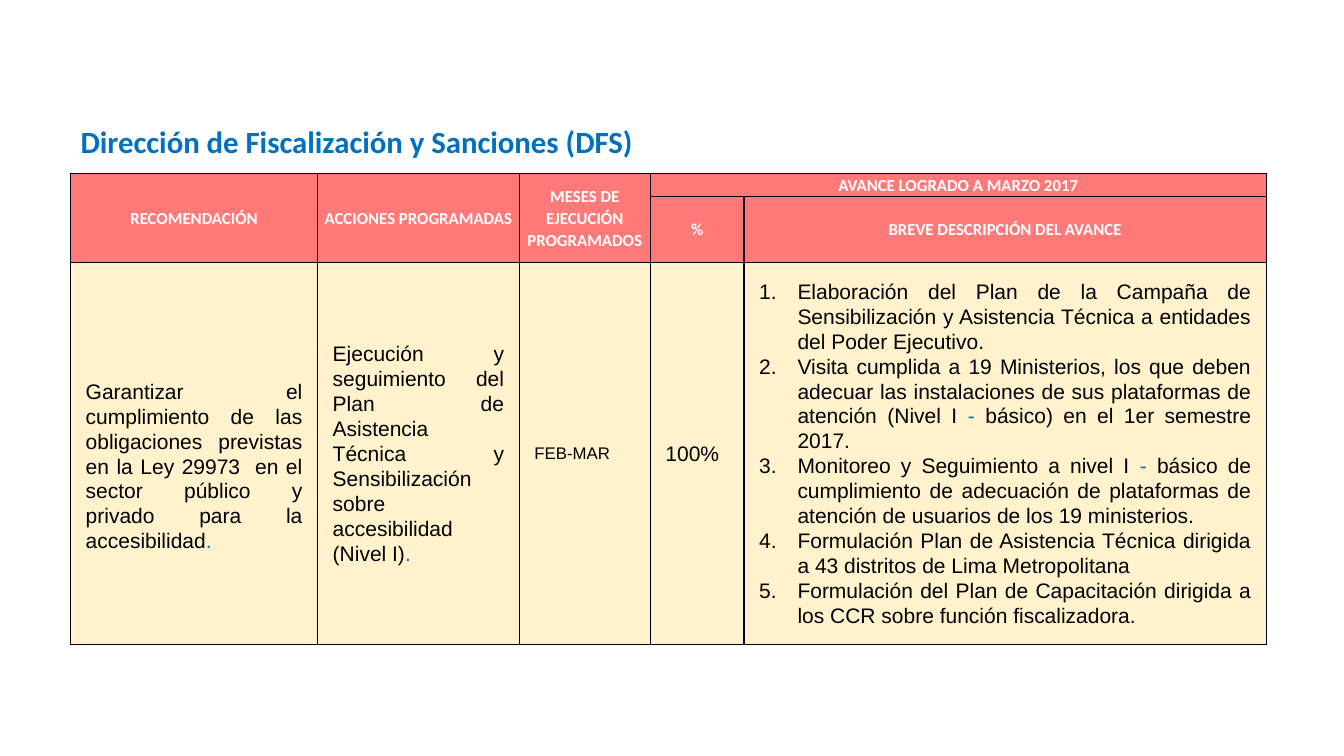
from dataclasses import dataclass

from lxml import etree
from pptx import Presentation
from pptx import util as u
from pptx.dml.color import RGBColor
from pptx.enum import text
from pptx.oxml import ns

WHITE = RGBColor(0xFF, 0xFF, 0xFF)
BLACK = RGBColor(0x00, 0x00, 0x00)
BLUE = RGBColor(0x00, 0x70, 0xC0)
CORAL = RGBColor(0xFF, 0x79, 0x79)
CREAM = RGBColor(0xFF, 0xF2, 0xCC)

COLUMN_WIDTHS = [2.45, 2, 1.3, 0.93, 5.18]
ROW_HEIGHTS = [0.23, 0.51, 3.79]


@dataclass
class Heading:
    label: str
    row: int
    column: int
    last_row: int
    last_column: int


@dataclass
class Entry:
    paragraphs: list[list[str]]
    size: float = 15
    numbered: bool = False
    top_margin: float = 0.15
    space_after: float = 0


HEADINGS = [
    Heading("RECOMENDACIÓN", 0, 0, 1, 0),
    Heading("ACCIONES PROGRAMADAS", 0, 1, 1, 1),
    Heading("MESES DE EJECUCIÓN PROGRAMADOS", 0, 2, 1, 2),
    Heading("AVANCE LOGRADO A MARZO 2017", 0, 3, 0, 4),
    Heading("%", 1, 3, 1, 3),
    Heading("BREVE DESCRIPCIÓN DEL AVANCE", 1, 4, 1, 4),
]

ENTRIES = [
    Entry([["Garantizar el cumplimiento de las obligaciones previstas en la "
            "Ley 29973  en el sector público y privado para la accesibilidad", "."]],
          top_margin=0.4),
    Entry([["Ejecución y seguimiento del Plan de Asistencia Técnica y "
            "Sensibilización sobre accesibilidad (Nivel I)", "."]],
          space_after=6),
    Entry([["FEB-MAR"]], size=12),
    Entry([["100%"]]),
    Entry([
        ["Elaboración del Plan de la Campaña de Sensibilización y Asistencia "
         "Técnica a entidades del Poder Ejecutivo."],
        ["Visita cumplida a 19 Ministerios, los que deben adecuar las instalaciones "
         "de sus plataformas de atención (Nivel I ", "- ",
         "básico) en el 1er semestre 2017."],
        ["Monitoreo y Seguimiento a nivel I ", "-",
         " básico de cumplimiento de adecuación de plataformas de atención de "
         "usuarios de los 19 ministerios."],
        ["Formulación Plan de Asistencia Técnica dirigida a 43 distritos de Lima "
         "Metropolitana"],
        ["Formulación del Plan de Capacitación dirigida a los CCR sobre función "
         "fiscalizadora."],
    ], numbered=True),
]


def write(frame, paragraphs: list[list[str]], *, size: float, font: str,
          colors: tuple[RGBColor, ...], bold: bool = False, align=None,
          line_spacing: float | None = None, space_after: float = 0,
          numbered: bool = False) -> None:
    for index, pieces in enumerate(paragraphs):
        paragraph = frame.paragraphs[0] if index == 0 else frame.add_paragraph()
        paragraph.alignment = align
        paragraph.line_spacing = line_spacing
        paragraph.space_after = u.Pt(space_after)
        if numbered:
            properties = paragraph._p.get_or_add_pPr()
            properties.set("marL", str(u.Inches(0.38)))
            properties.set("indent", str(-u.Inches(0.38)))
            number = etree.SubElement(properties, ns.qn("a:buAutoNum"))
            number.set("type", "arabicPeriod")
        for position, piece in enumerate(pieces):
            run = paragraph.add_run()
            run.text = piece
            run.font.size = u.Pt(size)
            run.font.name = font
            run.font.bold = bold
            run.font.color.rgb = colors[position % len(colors)]


def style_cell(cell, fill: RGBColor, side: float, top: float, bottom: float) -> None:
    cell.margin_left = cell.margin_right = u.Inches(side)
    cell.margin_top, cell.margin_bottom = u.Inches(top), u.Inches(bottom)
    cell.vertical_anchor = text.MSO_ANCHOR.MIDDLE
    properties = cell._tc.get_or_add_tcPr()
    for edge in ("a:lnL", "a:lnR", "a:lnT", "a:lnB"):
        border = etree.SubElement(properties, ns.qn(edge), w=str(u.Pt(1)))
        solid = etree.SubElement(border, ns.qn("a:solidFill"))
        etree.SubElement(solid, ns.qn("a:srgbClr"), val=str(BLACK))
    cell.fill.solid()
    cell.fill.fore_color.rgb = fill


def add_title(slide) -> None:
    title = slide.shapes.add_textbox(u.Inches(0.7), u.Inches(1.17),
                                     u.Inches(5.75), u.Inches(0.47)).text_frame
    title.word_wrap = False
    title.auto_size = text.MSO_AUTO_SIZE.SHAPE_TO_FIT_TEXT
    write(title, [["Dirección de Fiscalización y Sanciones (DFS)"]],
          size=22, font="Calibri", colors=(BLUE,), bold=True)


def add_progress_table(slide) -> None:
    progress = slide.shapes.add_table(
        len(ROW_HEIGHTS), len(COLUMN_WIDTHS), u.Inches(0.7), u.Inches(1.72),
        u.Inches(sum(COLUMN_WIDTHS)), u.Inches(sum(ROW_HEIGHTS))).table
    for column, width in zip(progress.columns, COLUMN_WIDTHS):
        column.width = u.Inches(width)
    for row, height in zip(progress.rows, ROW_HEIGHTS):
        row.height = u.Inches(height)
    for row in range(2):
        for column in range(len(COLUMN_WIDTHS)):
            style_cell(progress.cell(row, column), CORAL, 0.05, 0, 0)
    for heading in HEADINGS:
        cell = progress.cell(heading.row, heading.column)
        if (heading.row, heading.column) != (heading.last_row, heading.last_column):
            cell.merge(progress.cell(heading.last_row, heading.last_column))
        write(cell.text_frame, [[heading.label]], size=12, font="Calibri",
              colors=(WHITE,), bold=True, align=text.PP_ALIGN.CENTER,
              line_spacing=1.07)
    for column, entry in enumerate(ENTRIES):
        cell = progress.cell(2, column)
        style_cell(cell, CREAM, 0.15, entry.top_margin, 0.15)
        write(cell.text_frame, entry.paragraphs, size=entry.size, font="Arial",
              colors=(BLACK, BLUE), align=text.PP_ALIGN.JUSTIFY, line_spacing=1.07,
              space_after=entry.space_after, numbered=entry.numbered)


def main() -> None:
    presentation = Presentation()
    presentation.slide_width = u.Inches(13.33)
    presentation.slide_height = u.Inches(7.5)
    slide = presentation.slides.add_slide(presentation.slide_layouts[6])
    add_progress_table(slide)
    add_title(slide)
    presentation.save("out.pptx")


if __name__ == "__main__":
    main()
